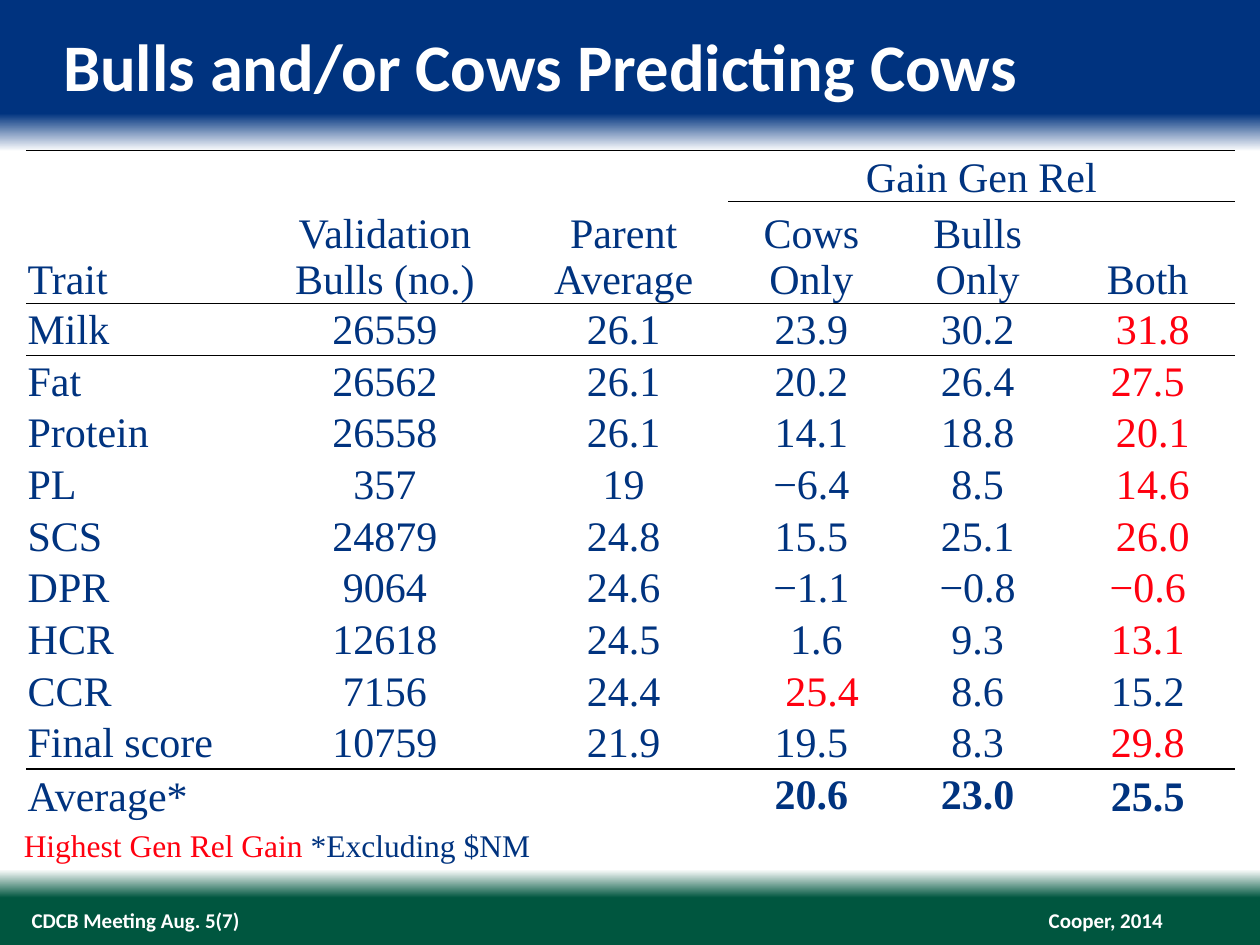
from pptx import Presentation
from pptx import util as u
from pptx.dml.color import RGBColor
from pptx.enum import text
from pptx.oxml import parse_xml
from pptx.oxml.ns import nsdecls, qn

NAVY = RGBColor(0x00, 0x33, 0x7F)
GREEN = RGBColor(0x00, 0x56, 0x3F)
RED = RGBColor(0xFF, 0x00, 0x0F)
WHITE = RGBColor(0xFF, 0xFF, 0xFF)
BLACK = RGBColor(0, 0, 0)
SANS, SERIF = "Calibri", "Times New Roman"
LEFT, MID, RIGHT = text.PP_ALIGN.LEFT, text.PP_ALIGN.CENTER, text.PP_ALIGN.RIGHT
CENTRE, LOW = text.MSO_ANCHOR.MIDDLE, text.MSO_ANCHOR.BOTTOM
PLAIN = "{2D5ABB26-0587-4C30-8999-92F81FD0307C}"

STOPS = [(0, NAVY), (12, NAVY), (16, WHITE), (92, WHITE), (95, GREEN), (100, GREEN)]
COLS = [1.78, 2.13, 1.66, 1.32, 1.32, 1.38]
TALL = [0.4, 0.81] + [0.41] * 10
ROWS = [
    ["", "", "", "Gain Gen Rel", "", ""],
    ["Trait", "Validation Bulls (no.)", "Parent Average", "Cows Only", "Bulls Only", "Both"],
    ["Milk", "26559", "26.1", "23.9", "30.2", "31.8"],
    ["Fat", "26562", "26.1", "20.2", "26.4", "27.5"],
    ["Protein", "26558", "26.1", "14.1", "18.8", "20.1"],
    ["PL", "357", "19", "−6.4", "8.5", "14.6"],
    ["SCS", "24879", "24.8", "15.5", "25.1", "26.0"],
    ["DPR", "9064", "24.6", "−1.1", "−0.8", "−0.6"],
    ["HCR", "12618", "24.5", "1.6", "9.3", "13.1"],
    ["CCR", "7156", "24.4", "25.4", "8.6", "15.2"],
    ["Final\u00a0score", "10759", "21.9", "19.5", "8.3", "29.8"],
    ["Average*", "", "", "20.6", "23.0", "25.5"],
]
LAST = len(ROWS) - 1
BEST = {(row, 5) for row in range(2, LAST) if row != 9} | {(9, 3)}
# Extra left margin of the cells that sit right of centre
SHIFT = {(2, 5): 0.08, (4, 5): 0.08, (5, 5): 0.08, (6, 5): 0.08, (8, 3): 0.08, (9, 3): 0.17}
# Rules by the row above them: first column, width in points
RULES = {-1: (0, 0.5), 0: (3, 0.5), 1: (0, 0.5), LAST - 1: (0, 1)}


def style(font, name, size, color, bold=False):
    font.name, font.size, font.bold = name, u.Pt(size), bold
    font.color.rgb = color


def pad(item, left, top, right, low):
    item.margin_left, item.margin_top = u.Inches(left), u.Inches(top)
    item.margin_right, item.margin_bottom = u.Inches(right), u.Inches(low)


def place(shape, box):
    shape.left, shape.top, shape.width, shape.height = map(u.Inches, box)


def paint(slide):
    stops = "".join(f'<a:gs pos="{pos * 1000}"><a:srgbClr val="{color}"/></a:gs>'
                    for pos, color in STOPS)
    slide.background.fill.solid()
    fill = slide.background._cSld.bg.bgPr.find(qn("a:solidFill"))
    grad = parse_xml(f'<a:gradFill {nsdecls("a")} rotWithShape="1"><a:gsLst>{stops}</a:gsLst>'
                     '<a:lin ang="5400000" scaled="0"/></a:gradFill>')
    fill.getparent().replace(fill, grad)


def add_title(slide, words):
    title = slide.shapes.title
    place(title, (0.5, 0.2, 9, 0.64))
    frame = title.text_frame
    pad(frame, 0, 0, 0, 0)
    frame.vertical_anchor = text.MSO_ANCHOR.TOP
    frame.text = words
    para = frame.paragraphs[0]
    para.alignment, para.line_spacing = LEFT, 1.0
    style(para.font, SANS, 38, WHITE, True)


def add_foot(slide, words, box, align, wrap):
    frame = slide.shapes.add_textbox(*map(u.Inches, box)).text_frame
    pad(frame, 0, 0, 0, 0)
    frame.word_wrap, frame.vertical_anchor = wrap, CENTRE
    para = frame.paragraphs[0]
    para.text, para.alignment = words, align
    style(para.font, SANS, 12, WHITE, True)


def add_key(slide, parts):
    frame = slide.shapes.add_textbox(*map(u.Inches, (0.09, 6.51, 4.31, 0.4))).text_frame
    frame.word_wrap = True
    for words, color in parts:
        run = frame.paragraphs[0].add_run()
        run.text = words
        style(run.font, SERIF, 18, color)


def rule(cell, side, width):
    cell._tc.get_or_add_tcPr().append(parse_xml(
        f'<a:{side} {nsdecls("a")} w="{u.Pt(width)}"><a:solidFill>'
        f'<a:srgbClr val="{BLACK}"/></a:solidFill></a:{side}>'))


def fill_cell(cell, row, col):
    for side, above in (("lnT", row - 1), ("lnB", row)):
        first, width = RULES.get(above, (len(COLS), 0))
        if col >= first:
            rule(cell, side, width)
    cell.fill.background()
    pad(cell, 0.01 + SHIFT.get((row, col), 0), 0.01, 0.01, 0)
    low = row < 2 or (row == LAST and col in (0, 5))
    cell.vertical_anchor = LOW if low else CENTRE
    para = cell.text_frame.paragraphs[0]
    para.text = ROWS[row][col]
    para.alignment = MID if col else LEFT
    color = RED if (row, col) in BEST else NAVY
    style(para.font, SERIF, 24, color, row == LAST and col > 0)


def add_grid(slide):
    box = map(u.Inches, (0.21, 1.19, sum(COLS), sum(TALL)))
    table = slide.shapes.add_table(len(ROWS), len(COLS), *box).table
    table.first_row = table.horz_banding = False
    table._tbl.tblPr.find(qn("a:tableStyleId")).text = PLAIN
    for col, width in zip(table.columns, COLS):
        col.width = u.Inches(width)
    for row, height in zip(table.rows, TALL):
        row.height = u.Inches(height)
    for row in range(len(ROWS)):
        for col in range(len(COLS)):
            fill_cell(table.cell(row, col), row, col)
    table.cell(0, 3).merge(table.cell(0, 5))


def main():
    deck = Presentation()
    deck.slide_width, deck.slide_height = u.Inches(10), u.Inches(7.5)
    slide = deck.slides.add_slide(deck.slide_layouts[5])
    paint(slide)
    # Footer
    add_foot(slide, "Cooper, 2014", (8.3, 7.2, 0.93, 0.2), RIGHT, False)
    add_foot(slide, "CDCB Meeting Aug. 5(7)", (0.25, 7.2, 5.22, 0.2), LEFT, True)
    # Content
    add_grid(slide)
    add_title(slide, "Bulls and/or Cows Predicting Cows")
    add_key(slide, [("Highest Gen Rel Gain ", RED), ("*Excluding $NM", NAVY)])
    deck.save("out.pptx")


if __name__ == "__main__":
    main()
